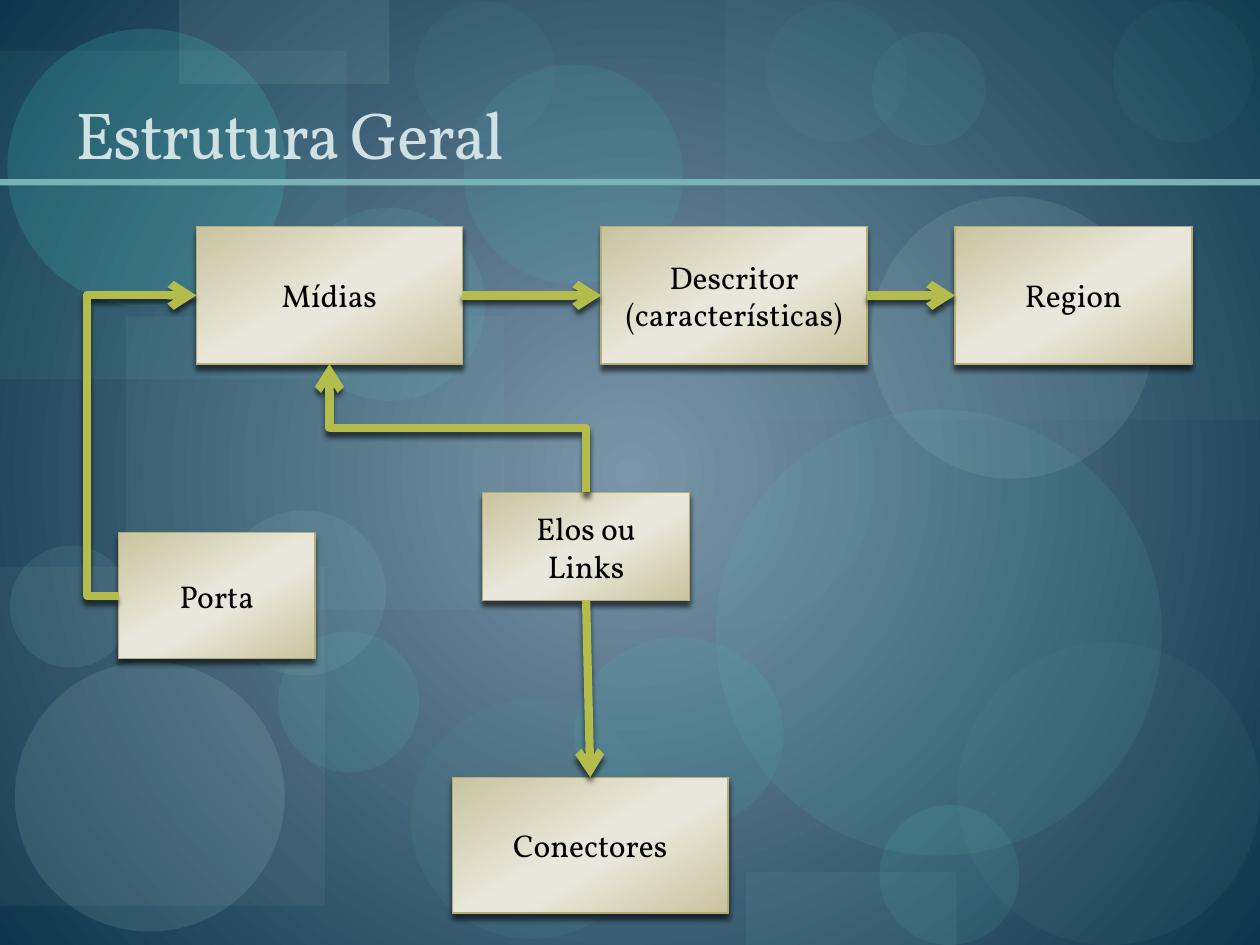
from typing import NamedTuple

from lxml import etree
from pptx import Presentation
from pptx.dml.color import RGBColor
from pptx.enum.shapes import MSO_CONNECTOR, MSO_SHAPE
from pptx.enum.text import MSO_ANCHOR, PP_ALIGN
from pptx.oxml import parse_xml
from pptx.oxml.ns import nsdecls, qn
from pptx.shapes.autoshape import Shape
from pptx.shapes.connector import Connector
from pptx.slide import Slide
from pptx.util import Cm, Pt

FONT = "Vollkorn"
BLACK = RGBColor(0x00, 0x00, 0x00)
TITLE_COLOR = RGBColor(0xD1, 0xE1, 0xE3)
TEAL = RGBColor(0x79, 0xB5, 0xB0)
MINT = RGBColor(0x65, 0xE8, 0xDC)
AQUA = RGBColor(0x44, 0xEA, 0xDC)
ICE = RGBColor(0xC1, 0xE8, 0xE4)
SEA = RGBColor(0x97, 0xDC, 0xD6)
SAGE = RGBColor(0x70, 0xA3, 0x9E)
PINE = RGBColor(0x54, 0x97, 0x91)
LAGOON = RGBColor(0x61, 0xCD, 0xC4)
TURQUOISE = RGBColor(0x77, 0xD6, 0xCE)
MIST = RGBColor(0xBE, 0xD7, 0xD4)
GRAY = RGBColor(0xB2, 0xB7, 0xBA)
SAND = RGBColor(0xC9, 0xC3, 0x9D)
CREAM = RGBColor(0xE9, 0xE7, 0xDB)
BOX_EDGE = RGBColor(0xB6, 0xAD, 0x76)
ARROW = RGBColor(0xB4, 0xBC, 0x4C)
BLUE_CENTER = RGBColor(0x7B, 0x96, 0xAA)
BLUE_EDGE = RGBColor(0x0E, 0x35, 0x4D)

RECT, OVAL = MSO_SHAPE.RECTANGLE, MSO_SHAPE.OVAL
TOP, LEFT, BOTTOM, RIGHT = range(4)  # connection sites of a rectangle


class Decoration(NamedTuple):
    kind: MSO_SHAPE
    left: float
    top: float
    width: float
    height: float
    color: RGBColor
    opacity: int = 100


class Box(NamedTuple):
    lines: tuple[str, ...]
    left: float
    top: float
    width: float
    height: float


class Link(NamedTuple):
    source: str
    source_site: int
    target: str
    target_site: int
    kind: MSO_CONNECTOR = MSO_CONNECTOR.STRAIGHT
    bend: float = 0.5


def circle(left: float, top: float, size: float, color: RGBColor, opacity: int) -> Decoration:
    return Decoration(OVAL, left, top, size, size, color, opacity)


DECORATIONS = (
    Decoration(RECT, 2.54, 6.38, 7.62, 5.92, TEAL, 9),
    Decoration(OVAL, 8.28, 14.1, 4.88, 4.83, PINE, 13),
    Decoration(RECT, 14.61, 0, 10.79, 8.46, TEAL, 6),
    Decoration(RECT, 0, 11.43, 6.55, 6.83, GRAY, 8),
    circle(11.61, 6.63, 6.05, SAGE, 8),
    circle(17.73, 16.23, 2.82, MINT, 9),
    circle(17.55, 3.96, 5.69, ICE, 11),
    circle(0.3, 13.34, 5.44, ICE, 12),
    circle(5.61, 12.73, 2.84, MINT, 9),
    Decoration(OVAL, 11.58, 12.85, 4.22, 3.89, AQUA, 8),
    Decoration(RECT, 0, 1.02, 6.99, 6.63, TURQUOISE, 7),
    Decoration(RECT, 3.61, 0, 4.24, 1.7, MIST, 10),
    circle(0.15, 0.58, 5.61, AQUA, 15),
    circle(0.2, 11, 2.46, SEA, 10),
    circle(5.89, 4.19, 3.89, MINT, 9),
    circle(9.35, 1.3, 4.42, AQUA, 8),
    circle(14.43, 8.26, 8.99, LAGOON, 10),
    circle(15.44, 0.03, 2.84, MINT, 4),
    circle(19.3, 12.95, 6.1, SAGE, 8),
    circle(4.45, 10.29, 3.33, SEA, 10),
    circle(17.58, 0.64, 2.29, MINT, 6),
    circle(22.43, 0.03, 2.84, MINT, 4),
    Decoration(RECT, 15.04, 17.58, 4.24, 1.47, TEAL, 10),
    circle(8.36, 0.03, 2.84, MINT, 4),
    Decoration(RECT, 0, 3.61, 25.4, 0.13, TEAL),
)

ROW_TOP, ROW_HEIGHT = 4.57, 2.77
BOXES = {
    "region": Box(("Region",), 19.25, ROW_TOP, 4.78, ROW_HEIGHT),
    "descriptor": Box(("Descritor", "(características)"), 12.12, ROW_TOP, 5.36, ROW_HEIGHT),
    "media": Box(("Mídias",), 3.96, ROW_TOP, 5.36, ROW_HEIGHT),
    "port": Box(("Porta",), 2.39, 10.74, 3.96, 2.54),
    "connectors": Box(("Conectores",), 9.12, 15.67, 5.56, 2.74),
    "links": Box(("Elos ou Links",), 9.73, 9.93, 4.17, 2.18),
}
LINKS = (
    Link("descriptor", RIGHT, "region", LEFT),
    Link("media", RIGHT, "descriptor", LEFT),
    Link("links", BOTTOM, "connectors", TOP),
    Link("links", TOP, "media", BOTTOM, MSO_CONNECTOR.ELBOW),
    Link("port", LEFT, "media", LEFT, MSO_CONNECTOR.ELBOW, -0.4),
)


def set_gradient(owner: etree.ElementBase, stops: dict[int, RGBColor], direction: str) -> None:
    """Swap the solid fill of owner for a gradient with stops in percent."""
    marks = "".join(
        f'<a:gs pos="{place * 1000}"><a:srgbClr val="{color}"/></a:gs>'
        for place, color in stops.items()
    )
    gradient = parse_xml(
        f'<a:gradFill {nsdecls("a")} rotWithShape="1"><a:gsLst>{marks}</a:gsLst>{direction}</a:gradFill>'
    )
    owner.replace(owner.find(qn("a:solidFill")), gradient)


def add_shadow(properties: etree.ElementBase) -> None:
    effects = properties.find(qn("a:effectLst"))
    if effects is None:
        effects = etree.SubElement(properties, qn("a:effectLst"))
    effects.append(parse_xml(
        f'<a:outerShdw {nsdecls("a")} blurRad="{Pt(3)}" dist="{Pt(3)}" dir="5400000" rotWithShape="0">'
        '<a:srgbClr val="000000"><a:alpha val="60000"/></a:srgbClr></a:outerShdw>'
    ))


def draw_decoration(slide: Slide, item: Decoration) -> None:
    shape = slide.shapes.add_shape(
        item.kind, Cm(item.left), Cm(item.top), Cm(item.width), Cm(item.height))
    shape.shadow.inherit = False
    shape.line.fill.background()
    shape.fill.solid()
    shape.fill.fore_color.rgb = item.color
    if item.opacity < 100:
        color = shape._element.spPr.find(f'{qn("a:solidFill")}/{qn("a:srgbClr")}')
        etree.SubElement(color, qn("a:alpha")).set("val", str(item.opacity * 1000))


def draw_title(slide: Slide, text: str) -> None:
    frame = slide.shapes.add_textbox(Cm(1.27), Cm(0.43), Cm(22.86), Cm(3.18)).text_frame
    frame.word_wrap = True
    frame.vertical_anchor = MSO_ANCHOR.BOTTOM
    run = frame.paragraphs[0].add_run()
    run.text = text
    run.font.name, run.font.size = FONT, Pt(38)
    run.font.color.rgb = TITLE_COLOR
    run.font._element.set("spc", "-100")


def draw_box(slide: Slide, box: Box) -> Shape:
    shape = slide.shapes.add_shape(
        RECT, Cm(box.left), Cm(box.top), Cm(box.width), Cm(box.height))
    shape.shadow.inherit = False
    shape.fill.solid()
    shape.line.color.rgb, shape.line.width = BOX_EDGE, Pt(0.79)
    properties = shape._element.spPr
    set_gradient(properties, {0: SAND, 48: CREAM, 58: CREAM, 100: SAND},
                 '<a:lin ang="3600000" scaled="0"/>')
    add_shadow(properties)
    frame = shape.text_frame
    frame.word_wrap = True
    frame.vertical_anchor = MSO_ANCHOR.MIDDLE
    for index, line in enumerate(box.lines):
        paragraph = frame.add_paragraph() if index else frame.paragraphs[0]
        paragraph.alignment = PP_ALIGN.CENTER
        run = paragraph.add_run()
        run.text = line
        run.font.name, run.font.size = FONT, Pt(18)
        run.font.color.rgb = BLACK
    return shape


def turn_upward(connector: Connector) -> None:
    """Make an elbow that runs up and left leave and arrive vertically."""
    left, top, width, height = connector.left, connector.top, connector.width, connector.height
    connector.left, connector.top = left + (width - height) // 2, top + (height - width) // 2
    connector.width, connector.height = height, width
    frame = connector._element.spPr.xfrm
    frame.flipH, frame.flipV = False, True
    frame.set("rot", "16200000")


def draw_link(slide: Slide, link: Link, shapes: dict[str, Shape]) -> None:
    connector = slide.shapes.add_connector(link.kind, 0, 0, 0, 0)
    connector.begin_connect(shapes[link.source], link.source_site)
    connector.end_connect(shapes[link.target], link.target_site)
    connector.line.color.rgb, connector.line.width = ARROW, Pt(4.72)
    properties = connector._element.spPr
    etree.SubElement(properties.find(qn("a:ln")), qn("a:tailEnd")).set("type", "arrow")
    add_shadow(properties)
    if link.kind == MSO_CONNECTOR.ELBOW:
        guide = etree.SubElement(properties.find(f'{qn("a:prstGeom")}/{qn("a:avLst")}'), qn("a:gd"))
        guide.set("name", "adj1")
        guide.set("fmla", f"val {round(link.bend * 100000)}")
        if link.source_site == TOP:
            turn_upward(connector)


def main() -> None:
    deck = Presentation()
    deck.slide_width, deck.slide_height = Cm(25.4), Cm(19.05)
    slide = deck.slides.add_slide(deck.slide_layouts[6])
    slide.background.fill.solid()
    set_gradient(slide._element.find(f'.//{qn("p:bgPr")}'), {0: BLUE_CENTER, 100: BLUE_EDGE},
                 '<a:path path="circle"><a:fillToRect l="50000" t="50000" r="50000" b="50000"/></a:path>')
    for item in DECORATIONS:
        draw_decoration(slide, item)
    draw_title(slide, "Estrutura Geral")
    shapes = {name: draw_box(slide, box) for name, box in BOXES.items()}
    for link in LINKS:
        draw_link(slide, link, shapes)
    deck.save("out.pptx")


if __name__ == "__main__":
    main()
